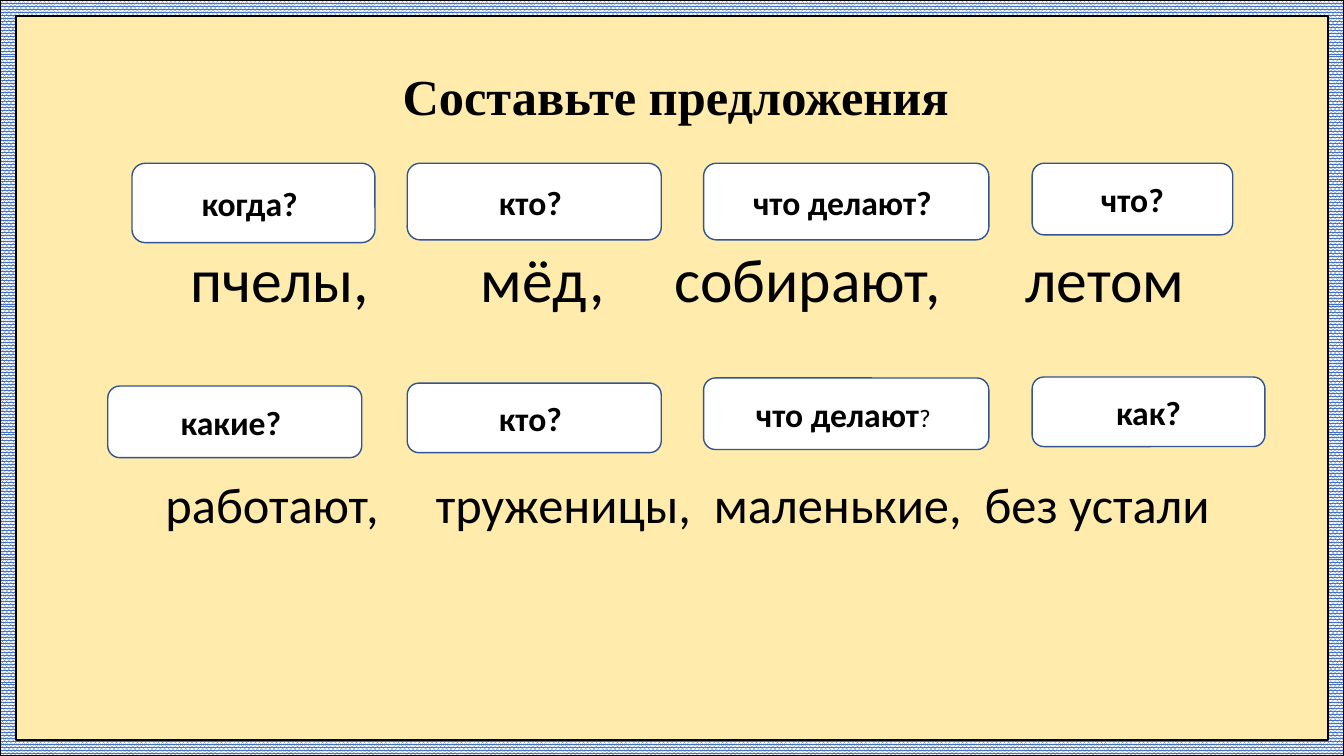
from dataclasses import dataclass

from pptx import Presentation
from pptx.dml.color import RGBColor
from pptx.enum.dml import MSO_PATTERN
from pptx.enum.shapes import MSO_SHAPE
from pptx.enum.text import MSO_ANCHOR, MSO_AUTO_SIZE, PP_ALIGN
from pptx.shapes.autoshape import Shape
from pptx.slide import Slide
from pptx.text.text import Font, _Paragraph
from pptx.util import Inches, Length, Pt

WIDE, HIGH = Inches(13.33), Inches(7.5)
SPACE = 0.226


@dataclass(frozen=True)
class Theme:
    ink: str = "000000"
    card: str = "FFFFFF"
    edge: str = "325491"
    sheet: str = "FFEBAB"
    weave: str = "4472C4"
    sans: str = "Calibri"
    serif: str = "Times New Roman"
    head: int = 36
    label: int = 24
    small: int = 18
    large: int = 44
    mid: int = 36


@dataclass(frozen=True)
class Card:
    text: str
    left: float
    top: float
    wide: float
    high: float
    tail: str = ""


@dataclass(frozen=True)
class Line:
    words: tuple[str, ...]
    gaps: tuple[int, ...]
    size: int
    above: int


LOOK = Theme()

CARDS = (
    Card("когда? ", 9.82, 21.6, 18.08, 10.5),
    Card("кто? ", 30.3, 21.6, 18.9, 10.13),
    Card("что делают? ", 52.35, 21.6, 21.22, 10.13),
    Card("что?", 76.8, 21.6, 14.92, 9.47),
    Card("какие? ", 8.02, 51.07, 18.9, 9.47),
    Card("кто? ", 30.3, 50.67, 18.9, 9.2),
    Card("что делают", 52.35, 50, 21.22, 9.47, "? "),
    Card("как?", 76.8, 49.87, 17.32, 9.2),
)

LINES = (
    Line(("пчелы,", "мёд,", "собирают,", "летом"), (8, 5, 6), LOOK.large, 0),
    Line(("работают,", "труженицы,", "маленькие,", "без устали"),
         (5, 2, 2), LOOK.mid, 117),
)


def across(share: float) -> Length:
    return Length(round(WIDE * share / 100))


def down(share: float) -> Length:
    return Length(round(HIGH * share / 100))


def tint(code: str) -> RGBColor:
    return RGBColor.from_string(code)


def place(shape: Shape, left: float, top: float, wide: float, high: float) -> None:
    shape.left, shape.top = across(left), down(top)
    shape.width, shape.height = across(wide), down(high)


def style(font: Font, face: str, size: int, bold: bool = False) -> None:
    font.name, font.size, font.bold = face, Pt(size), bold
    font.color.rgb = tint(LOOK.ink)


def panel(slide: Slide, kind: MSO_SHAPE, box: tuple[float, float, float, float],
          fill: str, edge: str, line: float = 1) -> Shape:
    left, top, wide, high = box
    shape = slide.shapes.add_shape(kind, across(left), down(top),
                                   across(wide), down(high))
    shape.shadow.inherit = False
    shape.fill.solid()
    shape.fill.fore_color.rgb = tint(fill)
    shape.line.color.rgb = tint(edge)
    shape.line.width = Pt(line)
    return shape


def border(slide: Slide) -> None:
    full = (0, 0, 100, 100)
    panel(slide, MSO_SHAPE.RECTANGLE, full, LOOK.sheet, LOOK.edge)
    frame = panel(slide, MSO_SHAPE.FRAME, full, LOOK.card, LOOK.ink, 1.5)
    frame.adjustments[0] = 0.021
    frame.fill.patterned()
    frame.fill.pattern = MSO_PATTERN.PERCENT_80
    frame.fill.fore_color.rgb = tint(LOOK.weave)
    frame.fill.back_color.rgb = tint(LOOK.card)


def raise_up(shape: Shape) -> None:
    shape.element.getparent().append(shape.element)


def head(title: Shape) -> None:
    place(title, 8.25, 0, 85, 17.4)
    frame = title.text_frame
    frame.auto_size = MSO_AUTO_SIZE.NONE
    frame.vertical_anchor = MSO_ANCHOR.BOTTOM
    frame.text = "Составьте предложения "
    para = frame.paragraphs[0]
    para.alignment, para.line_spacing = PP_ALIGN.CENTER, 0.9
    style(para.runs[0].font, LOOK.serif, LOOK.head, True)


def add_run(para: _Paragraph, text: str, size: int, track: float = 0) -> None:
    run = para.add_run()
    run.text = text
    style(run.font, LOOK.sans, size)
    if track:
        run._r.get_or_add_rPr().set("spc", str(round(track * 100)))


def add_line(para: _Paragraph, line: Line) -> None:
    para.alignment, para.line_spacing = PP_ALIGN.CENTER, 0.9
    para.space_before = Pt(line.above)
    add_run(para, line.words[0], line.size)
    for gap, word in zip(line.gaps, line.words[1:]):
        add_run(para, " ", line.size, (gap - 1) * SPACE * line.size)
        add_run(para, word, line.size)


def fill_body(body: Shape) -> None:
    place(body, 3.53, 18.53, 95.27, 73.47)
    frame = body.text_frame
    frame.auto_size = MSO_AUTO_SIZE.NONE
    frame.word_wrap = True
    frame.vertical_anchor = MSO_ANCHOR.TOP
    frame.margin_top = down(14.5)
    add_line(frame.paragraphs[0], LINES[0])
    for line in LINES[1:]:
        add_line(frame.add_paragraph(), line)


def add_card(slide: Slide, card: Card) -> None:
    shape = panel(slide, MSO_SHAPE.ROUNDED_RECTANGLE,
                  (card.left, card.top, card.wide, card.high),
                  LOOK.card, LOOK.edge)
    frame = shape.text_frame
    frame.word_wrap = True
    frame.vertical_anchor = MSO_ANCHOR.MIDDLE
    frame.text = card.text
    para = frame.paragraphs[0]
    para.alignment = PP_ALIGN.CENTER
    style(para.runs[0].font, LOOK.sans, LOOK.label, True)
    if card.tail:
        add_run(para, card.tail, LOOK.small)


def main() -> None:
    """Build the slide on composing sentences and save it."""
    deck = Presentation()
    deck.slide_width, deck.slide_height = WIDE, HIGH
    slide = deck.slides.add_slide(deck.slide_layouts[0])
    title, body = slide.placeholders
    border(slide)
    for shape in (title, body):
        raise_up(shape)
    head(title)
    fill_body(body)
    for card in CARDS:
        add_card(slide, card)
    deck.save("out.pptx")


if __name__ == "__main__":
    main()
